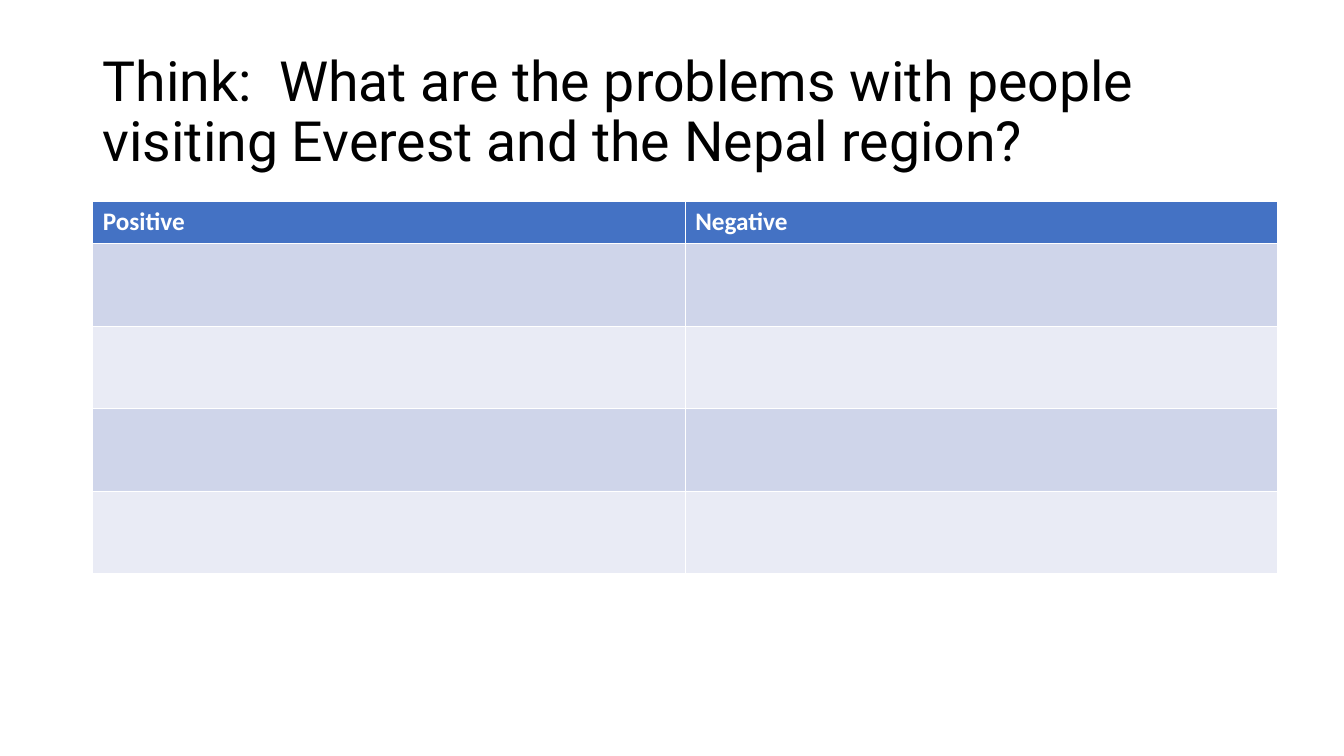
from pptx import Presentation
from pptx.dml.color import RGBColor
from pptx.enum.text import MSO_ANCHOR, MSO_AUTO_SIZE, PP_ALIGN
from pptx.util import Cm, Pt

LEFT = PP_ALIGN.LEFT
MIDDLE = MSO_ANCHOR.MIDDLE
NO_FIT = MSO_AUTO_SIZE.NONE
TITLE_ONLY = 5

COLORS = {
    "title": "000000",
    "header": "4472C4",
    "header_text": "FFFFFF",
    "odd_row": "CFD5EA",
    "even_row": "E9EBF5",
}
HEADINGS = ["Positive", "Negative"]
ANSWER_ROWS = 4


def rgb(name):
    return RGBColor.from_string(COLORS[name])


def set_font(p, name, size, color, bold=False):
    p.font.name = name
    p.font.size = Pt(size)
    p.font.bold = bold
    p.font.color.rgb = rgb(color)


def add_title(slide, text):
    sp = slide.shapes.title
    sp.left, sp.top, sp.width, sp.height = Cm(2.33), Cm(1.01), Cm(29.21), Cm(3.68)
    tf = sp.text_frame
    tf.text = text
    tf.word_wrap = True
    tf.auto_size = NO_FIT
    tf.vertical_anchor = MIDDLE
    p = tf.paragraphs[0]
    p.alignment = LEFT
    p.line_spacing = 0.9
    set_font(p, "Roboto", 39.6, "title")


def add_answer_table(slide, headings, answer_rows):
    col_width, header_height, row_height = Cm(14.93), Cm(1.06), Cm(2.08)
    table = slide.shapes.add_table(
        answer_rows + 1, len(headings), Cm(2.34), Cm(5.08),
        col_width * len(headings), header_height + row_height * answer_rows,
    ).table
    for column in table.columns:
        column.width = col_width

    # Banded fills below a solid header
    for i, row in enumerate(table.rows):
        row.height = row_height if i else header_height
        band = "odd_row" if i % 2 else "even_row"
        for cell in row.cells:
            cell.fill.solid()
            cell.fill.fore_color.rgb = rgb(band if i else "header")

    # Column headings
    for cell, heading in zip(table.rows[0].cells, headings):
        cell.text = heading
        set_font(cell.text_frame.paragraphs[0], "Calibri", 18, "header_text", bold=True)


def main():
    prs = Presentation()
    prs.slide_width, prs.slide_height = Cm(33.87), Cm(19.05)
    slide = prs.slides.add_slide(prs.slide_layouts[TITLE_ONLY])
    add_title(slide, "Think:  What are the problems with people visiting Everest and the Nepal region?")
    add_answer_table(slide, HEADINGS, ANSWER_ROWS)
    prs.save("out.pptx")


if __name__ == "__main__":
    main()
